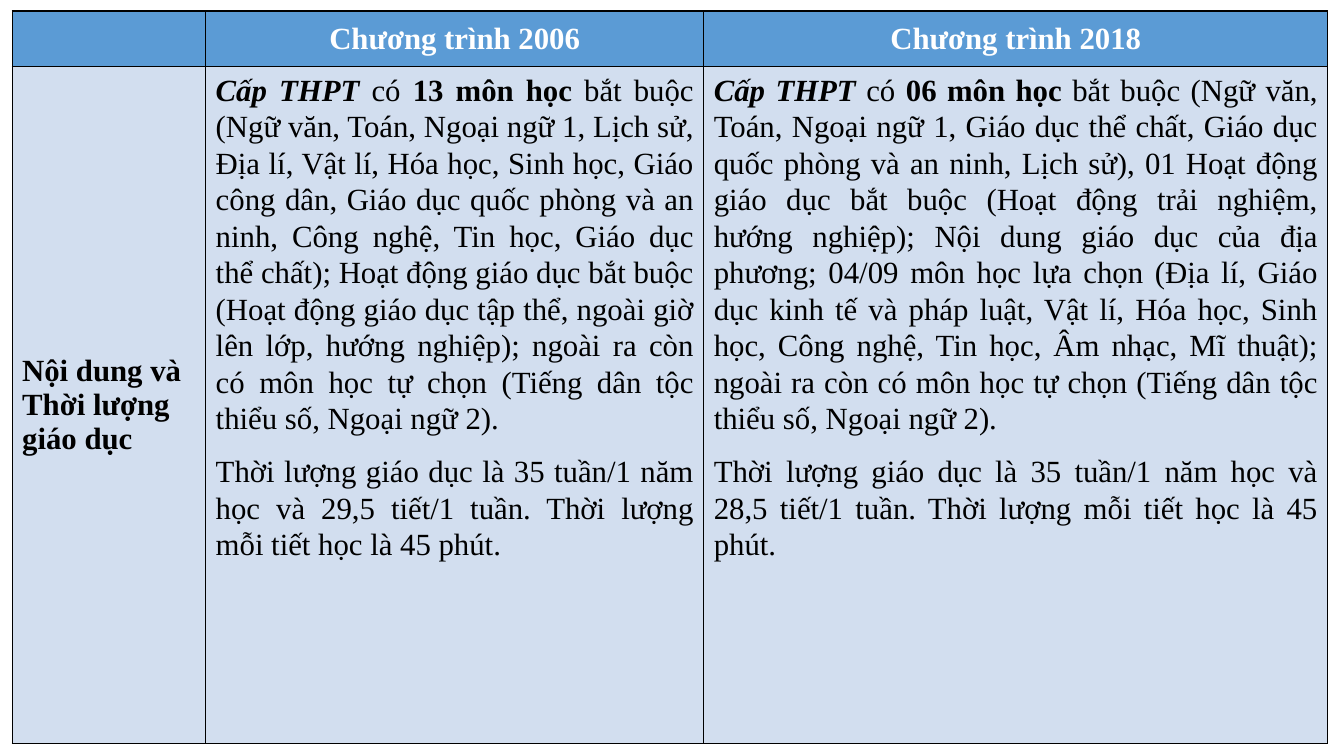
from dataclasses import dataclass

from lxml import etree
from pptx import Presentation
from pptx import util as u
from pptx.dml.color import RGBColor
from pptx.enum import text
from pptx.oxml import ns


@dataclass(frozen=True)
class Theme:
    font: str = "Times New Roman"
    size: int = 22
    header_fill: str = "5B9BD5"
    header_ink: str = "FFFFFF"
    body_fill: str = "D2DEEF"
    body_ink: str = "000000"
    border: str = "000000"
    border_width: int = 1


THEME = Theme()
COLUMN_WIDTHS = (1.92, 4.94, 6.19)
ROW_HEIGHTS = (0.55, 6.72)

# Content: a run is (text, bold, italic)
PROGRAMMES = ("Chương trình 2006", "Chương trình 2018")
CRITERION = "Nội dung và Thời lượng giáo dục"
SUBJECTS = (
    ("13 môn học ",
     "bắt buộc (Ngữ văn, Toán, Ngoại ngữ 1, Lịch sử, Địa lí, Vật lí, Hóa học, "
     "Sinh học, Giáo công dân, Giáo dục quốc phòng và an ninh, Công nghệ, Tin học, "
     "Giáo dục thể chất); Hoạt động giáo dục bắt buộc (Hoạt động giáo dục tập thể, "
     "ngoài giờ lên lớp, hướng nghiệp); ngoài ra còn có môn học tự chọn "
     "(Tiếng dân tộc thiểu số, Ngoại ngữ 2). ",
     "29,5"),
    ("06 môn học ",
     "bắt buộc (Ngữ văn, Toán, Ngoại ngữ 1, Giáo dục thể chất, Giáo dục quốc phòng "
     "và an ninh, Lịch sử), 01 Hoạt động giáo dục bắt buộc (Hoạt động trải nghiệm, "
     "hướng nghiệp); Nội dung giáo dục của địa phương; 04/09 môn học lựa chọn "
     "(Địa lí, Giáo dục kinh tế và pháp luật, Vật lí, Hóa học, Sinh học, Công nghệ, "
     "Tin học, Âm nhạc, Mĩ thuật); ngoài ra còn có môn học tự chọn "
     "(Tiếng dân tộc thiểu số, Ngoại ngữ 2). ",
     "28,5"),
)


def programme_paragraphs(count, subjects, periods):
    return [
        [("Cấp THPT ", True, True), ("có ", False, False),
         (count, True, False), (subjects, False, False)],
        [(f"Thời lượng giáo dục là 35 tuần/1 năm học và {periods} tiết/1 tuần. "
          "Thời lượng mỗi tiết học là 45 phút.", False, False)],
    ]


def style_cell(cell, fill):
    cell.fill.solid()
    cell.fill.fore_color.rgb = RGBColor.from_string(fill)
    properties = cell._tc.get_or_add_tcPr()
    # Borders come before the fill in the cell properties
    for position, side in enumerate(("lnL", "lnR", "lnT", "lnB")):
        border = etree.Element(ns.qn(f"a:{side}"), w=str(u.Pt(THEME.border_width)))
        solid = etree.SubElement(border, ns.qn("a:solidFill"))
        etree.SubElement(solid, ns.qn("a:srgbClr"), val=THEME.border)
        properties.insert(position, border)


def write_cell(cell, paragraphs, ink, align, middle=True, spaced=False):
    if middle:
        cell.vertical_anchor = text.MSO_ANCHOR.MIDDLE
    frame = cell.text_frame
    for index, runs in enumerate(paragraphs):
        paragraph = frame.add_paragraph() if index else frame.paragraphs[0]
        paragraph.alignment = align
        if spaced:
            paragraph.line_spacing = 1.07
            paragraph.space_before = paragraph.space_after = u.Pt(6)
        for words, bold, italic in runs:
            run = paragraph.add_run()
            run.text = words
            run.font.name = THEME.font
            run.font.size = u.Pt(THEME.size)
            run.font.bold = bold
            run.font.italic = italic
            run.font.color.rgb = RGBColor.from_string(ink)


def add_comparison(slide):
    comparison = slide.shapes.add_table(
        len(ROW_HEIGHTS), len(COLUMN_WIDTHS), u.Inches(0.12), u.Inches(0.11),
        u.Inches(sum(COLUMN_WIDTHS)), u.Inches(sum(ROW_HEIGHTS))).table
    for column, width in zip(comparison.columns, COLUMN_WIDTHS):
        column.width = u.Inches(width)
    for row, height, fill in zip(comparison.rows, ROW_HEIGHTS,
                                 (THEME.header_fill, THEME.body_fill)):
        row.height = u.Inches(height)
        for cell in row.cells:
            style_cell(cell, fill)

    # Row heading
    write_cell(comparison.cell(1, 0), [[(CRITERION, True, False)]],
               THEME.body_ink, text.PP_ALIGN.LEFT)
    # One column per programme
    for column, (programme, details) in enumerate(zip(PROGRAMMES, SUBJECTS), start=1):
        write_cell(comparison.cell(0, column), [[(programme, True, False)]],
                   THEME.header_ink, text.PP_ALIGN.CENTER)
        write_cell(comparison.cell(1, column), programme_paragraphs(*details),
                   THEME.body_ink, text.PP_ALIGN.JUSTIFY, middle=False, spaced=True)


def main():
    deck = Presentation()
    deck.slide_width, deck.slide_height = u.Inches(13.33), u.Inches(7.5)
    slide = deck.slides.add_slide(deck.slide_layouts[6])
    add_comparison(slide)
    deck.save("out.pptx")


if __name__ == "__main__":
    main()
